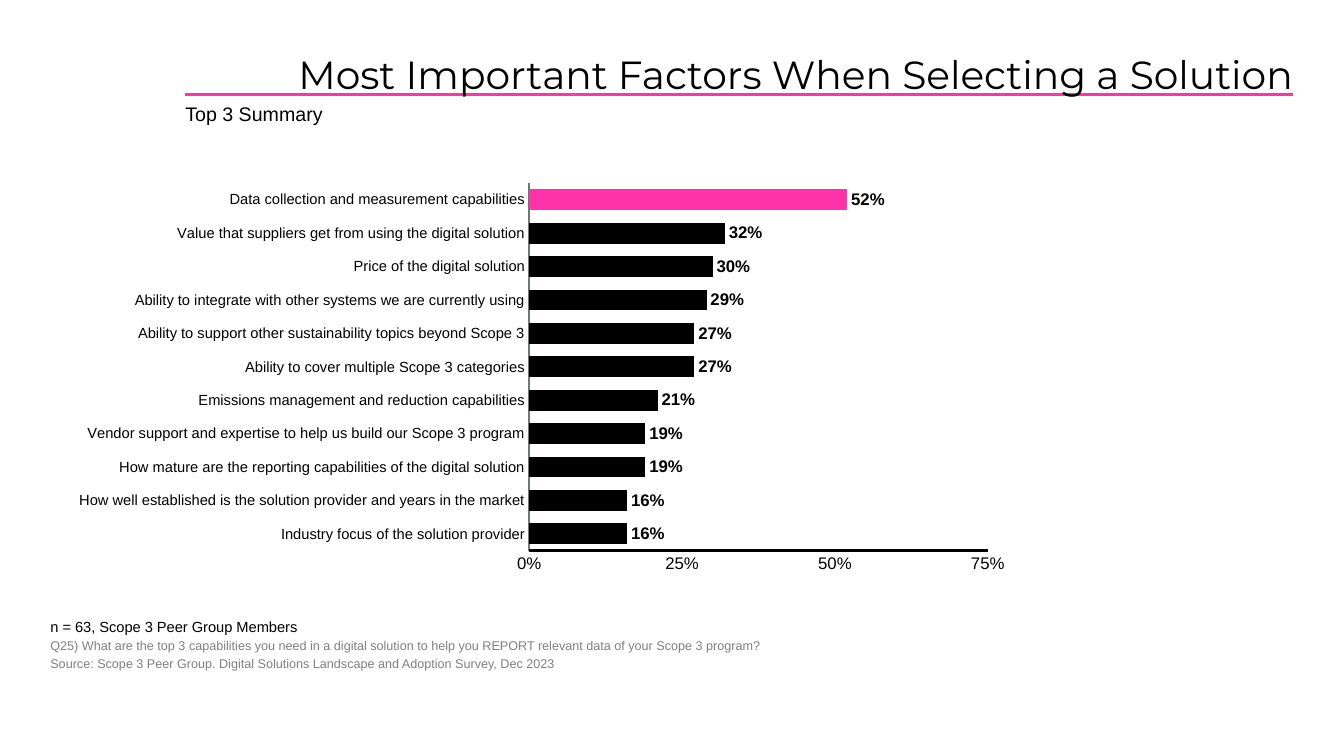
import pptx
import pptx.chart.data
import pptx.dml.color
import pptx.enum.chart
import pptx.enum.shapes
import pptx.enum.text
import pptx.oxml
import pptx.util
from lxml import etree
from pptx.oxml.ns import qn
from pptx.util import Cm, Pt

RGBColor = pptx.dml.color.RGBColor
BLACK = RGBColor(0x00, 0x00, 0x00)
PINK = RGBColor(0xFF, 0x32, 0xA9)
GRAY = RGBColor(0x80, 0x80, 0x80)
AXIS_GRAY = RGBColor(0x6F, 0x78, 0x78)

TITLE = "Most Important Factors When Selecting a Solution"
SUBTITLE = [("Top 3 Summary", 14, BLACK)]
FOOTNOTES = [
    ("n = 63, Scope 3 Peer Group Members", 10.5, BLACK),
    ("Q25) What are the top 3 capabilities you need in a digital solution to help you REPORT "
     "relevant data of your Scope 3 program?", 9, GRAY),
    ("Source: Scope 3 Peer Group. Digital Solutions Landscape and Adoption Survey, Dec 2023", 9, GRAY),
]
FACTORS = [
    ("Data collection and measurement capabilities", 0.52),
    ("Value that suppliers get from using the digital solution", 0.32),
    ("Price of the digital solution", 0.30),
    ("Ability to integrate with other systems we are currently using", 0.29),
    ("Ability to support other sustainability topics beyond Scope 3", 0.27),
    ("Ability to cover multiple Scope 3 categories", 0.27),
    ("Emissions management and reduction capabilities", 0.21),
    ("Vendor support and expertise to help us build our Scope 3 program", 0.19),
    ("How mature are the reporting capabilities of the digital solution", 0.19),
    ("How well established is the solution provider and years in the market", 0.16),
    ("Industry focus of the solution provider", 0.16),
]
PLOT_AREA = {"x": 0.495, "y": 0.004, "w": 0.474, "h": 0.864}

HEADER_LEFT, HEADER_WIDTH = Cm(4.67), Cm(27.91)
BODY_LEFT = Cm(1.27)
RULE_TOP = Cm(2.39)


def style_font(font, size, color=BLACK, name="Arial", bold=False):
    font.name = name
    font.size = Pt(size)
    font.bold = bold
    font.color.rgb = color


def add_text(slide, lines, left, top, width, height, anchor):
    text_frame = slide.shapes.add_textbox(left, top, width, height).text_frame
    text_frame.word_wrap = True
    text_frame.margin_left = 0
    text_frame.margin_top = text_frame.margin_right = text_frame.margin_bottom = Cm(0.25)
    text_frame.vertical_anchor = anchor
    text_frame.text = "\n".join(text for text, size, color in lines)
    for index, (paragraph, (text, size, color)) in enumerate(zip(text_frame.paragraphs, lines)):
        if index:
            paragraph.space_before = Pt(2)
        style_font(paragraph.runs[0].font, size, color)


def style_axis(axis, size, line_color):
    axis.has_major_gridlines = False
    axis.major_tick_mark = axis.minor_tick_mark = pptx.enum.chart.XL_TICK_MARK.NONE
    axis.format.line.color.rgb = line_color
    axis.format.line.width = Pt(1.57)
    style_font(axis.tick_labels.font, size)


def place_plot_area(chart):
    plot_area = chart._chartSpace.chart.plotArea
    for old_layout in plot_area.findall(qn("c:layout")):
        plot_area.remove(old_layout)
    layout = etree.Element(qn("c:layout"))
    manual = etree.SubElement(layout, qn("c:manualLayout"))
    settings = [("layoutTarget", "inner"), ("xMode", "edge"), ("yMode", "edge"), *PLOT_AREA.items()]
    for tag, value in settings:
        etree.SubElement(manual, qn(f"c:{tag}")).set("val", str(value))
    plot_area.insert(0, layout)


def add_factor_chart(slide):
    chart_data = pptx.chart.data.CategoryChartData(number_format="0%")
    rows = FACTORS[::-1]
    chart_data.categories = [factor for factor, share in rows]
    chart_data.add_series("Series 1", [share for factor, share in rows])
    chart = slide.shapes.add_chart(
        pptx.enum.chart.XL_CHART_TYPE.BAR_CLUSTERED,
        BODY_LEFT, Cm(4.57), Cm(24.38), Cm(10.72), chart_data).chart
    chart.has_legend = False
    chart.has_title = False
    style_font(chart.font, 10)
    style_axis(chart.category_axis, 10.5, AXIS_GRAY)
    value_axis = chart.value_axis
    style_axis(value_axis, 12, BLACK)
    value_axis.minimum_scale = 0
    value_axis.maximum_scale = 0.75
    value_axis.major_unit = 0.25
    value_axis.tick_labels.number_format = "0%"
    value_axis.tick_labels.number_format_is_linked = False

    plot = chart.plots[0]
    plot.gap_width = 60
    plot.vary_by_categories = False
    series = plot.series[0]
    series.invert_if_negative = False
    series.format.fill.solid()
    series.format.fill.fore_color.rgb = BLACK
    top_bar = series.points[len(rows) - 1].format.fill
    top_bar.solid()
    top_bar.fore_color.rgb = PINK
    labels = series.data_labels
    labels.show_value = True
    labels.number_format = "0%"
    labels.number_format_is_linked = False
    labels.position = pptx.enum.chart.XL_LABEL_POSITION.OUTSIDE_END
    style_font(labels.font, 12, bold=True)
    place_plot_area(chart)


def add_title(slide):
    rule = slide.shapes.add_connector(
        pptx.enum.shapes.MSO_CONNECTOR.STRAIGHT,
        HEADER_LEFT, RULE_TOP, HEADER_LEFT + HEADER_WIDTH, RULE_TOP)
    rule.line.color.rgb = PINK
    rule.line.width = Pt(2)
    etree.SubElement(rule._element.spPr, qn("a:effectLst"))

    title = slide.shapes.title
    title.left, title.top, title.width, title.height = HEADER_LEFT, Cm(1.24), HEADER_WIDTH, Cm(1.24)
    slide.shapes._spTree.append(title._element)
    text_frame = title.text_frame
    text_frame.margin_left = text_frame.margin_top = 0
    text_frame.margin_right = text_frame.margin_bottom = 0
    text_frame.vertical_anchor = pptx.enum.text.MSO_ANCHOR.MIDDLE
    text_frame.auto_size = pptx.enum.text.MSO_AUTO_SIZE.NONE
    text_frame.text = TITLE
    paragraph = text_frame.paragraphs[0]
    paragraph.alignment = pptx.enum.text.PP_ALIGN.RIGHT
    style_font(paragraph.runs[0].font, 28, name="Montserrat")


def main():
    presentation = pptx.Presentation()
    presentation.slide_width, presentation.slide_height = Cm(33.87), Cm(19.05)
    slide = presentation.slides.add_slide(presentation.slide_layouts[5])
    add_title(slide)
    add_text(slide, FOOTNOTES, BODY_LEFT, Cm(15.29), Cm(22.4), Cm(1.88),
             pptx.enum.text.MSO_ANCHOR.BOTTOM)
    add_factor_chart(slide)
    add_text(slide, SUBTITLE, HEADER_LEFT, Cm(2.31), Cm(18.34), Cm(1.12),
             pptx.enum.text.MSO_ANCHOR.TOP)
    presentation.save("out.pptx")


if __name__ == "__main__":
    main()
